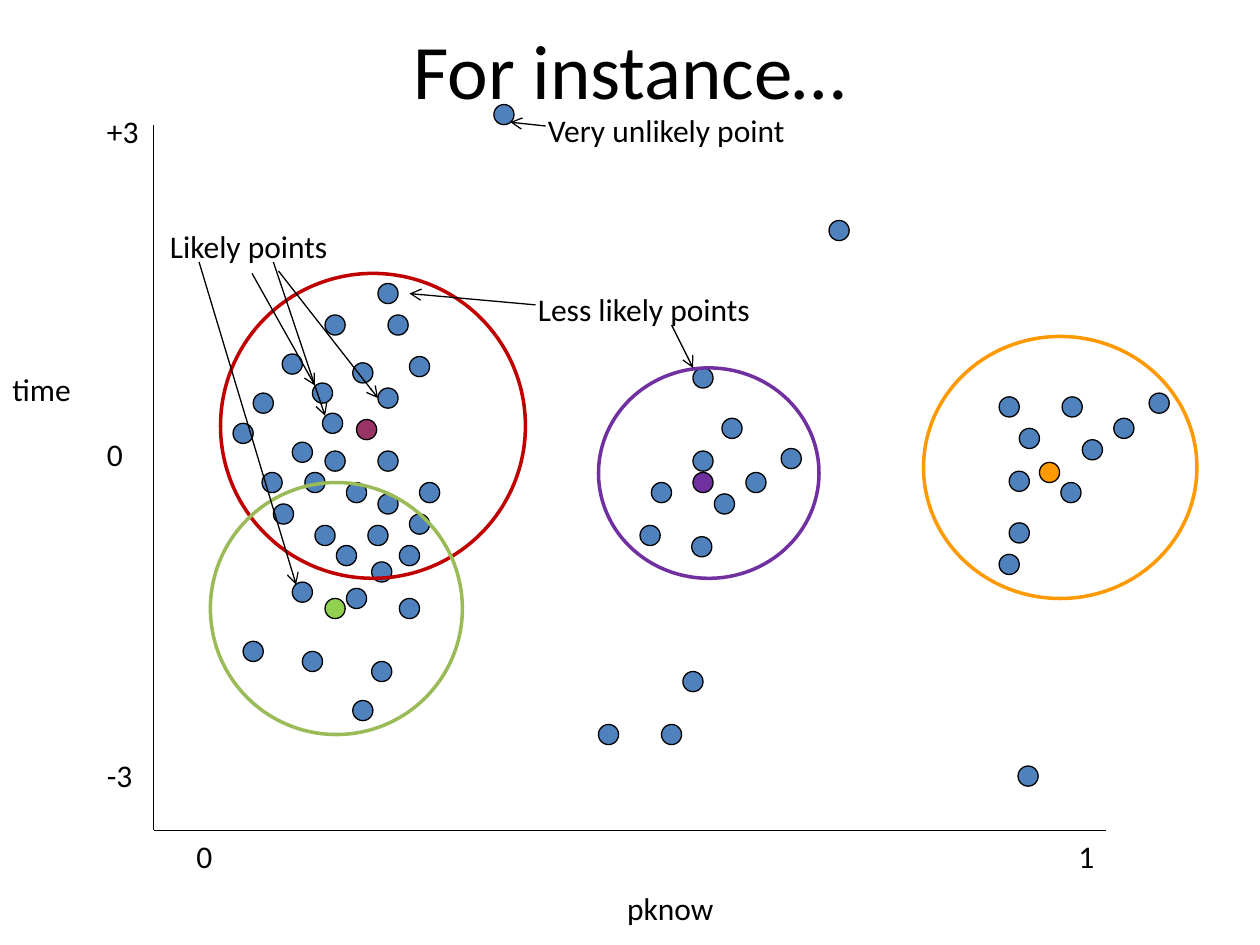
"""Build a slide of student clusters plotted by pknow and time, with likely and unlikely points."""
import pptx
import pptx.dml.color
import pptx.enum.shapes
import pptx.enum.text
import pptx.util
from lxml import etree
from pptx.oxml.ns import qn

PX = 9144  # EMU
DOT = 16
COLORS = {
    "ink": "000000", "point": "4F81BD",
    "plum": "993366", "lime": "92D050", "orange": "FF9900", "purple": "7030A0",
    "red": "C00000", "green": "9BBB59",
}

presentation = pptx.Presentation()
presentation.slide_width = 1000 * PX
presentation.slide_height = 750 * PX
slide = presentation.slides.add_slide(presentation.slide_layouts[6])
align = pptx.enum.text.PP_ALIGN
rgb = pptx.dml.color.RGBColor.from_string


def add_text(text, left, top, width, height=40, size=18, alignment=align.LEFT,
             anchor=pptx.enum.text.MSO_ANCHOR.TOP):
    label = slide.shapes.add_textbox(left * PX, top * PX, width * PX, height * PX)
    frame = label.text_frame
    frame.word_wrap = True
    frame.vertical_anchor = anchor
    paragraph = frame.paragraphs[0]
    paragraph.alignment = alignment
    run = paragraph.add_run()
    run.text = text
    run.font.name = "Calibri"
    run.font.size = pptx.util.Pt(size)
    run.font.color.rgb = rgb(COLORS["ink"])


def add_ellipse(left, top, width, height, line="ink", weight=0.75, fill=None):
    ellipse = slide.shapes.add_shape(
        pptx.enum.shapes.MSO_SHAPE.OVAL, left * PX, top * PX, width * PX, height * PX)
    ellipse.shadow.inherit = False
    if fill:
        ellipse.fill.solid()
        ellipse.fill.fore_color.rgb = rgb(COLORS[fill])
    else:
        ellipse.fill.background()
    ellipse.line.color.rgb = rgb(COLORS[line])
    ellipse.line.width = pptx.util.Pt(weight)


clustered_points = [
    # left clusters
    (317, 433), (267, 433), (275, 467), (325, 408), (317, 475), (292, 417),
    (217, 400), (242, 375), (208, 375), (308, 250), (258, 250), (325, 283),
    (275, 383), (300, 225), (300, 358), (333, 383), (258, 358), (280, 556),
    (295, 525), (193, 509), (232, 462), (295, 446), (240, 517), (248, 304),
    (224, 281), (185, 336), (201, 312), (232, 351), (280, 288), (300, 392),
    (256, 328), (300, 308), (250, 417),
    # middle cluster
    (517, 383), (508, 417), (567, 392), (592, 375), (550, 358), (549, 426),
    (620, 356), (550, 292), (573, 332),
    # right cluster
    (793, 440), (793, 315), (809, 340), (801, 374), (859, 349), (801, 415),
    (884, 332), (843, 315), (842, 383), (912, 312),
]
for left, top in clustered_points:
    add_ellipse(left, top, DOT, DOT, fill="point")

centers = [(283, 333, "plum"), (258, 475, "lime"), (825, 367, "orange"), (550, 375, "purple")]
for left, top, color in centers:
    add_ellipse(left, top, DOT, DOT, fill=color)

boundaries = [
    (175, 217, 242, 242, "red"),
    (167, 383, 200, 200, "green"),
    (475, 292, 175, 167, "purple"),
    (733, 267, 217, 208, "orange"),
]
for left, top, width, height, color in boundaries:
    add_ellipse(left, top, width, height, line=color, weight=2)

outliers = [(392, 83), (475, 575), (525, 575), (542, 533), (808, 608), (658, 175)]
for left, top in outliers:
    add_ellipse(left, top, DOT, DOT, fill="point")

add_text("For instance…", 50, -8, 900, height=125, size=44, alignment=align.CENTER,
         anchor=pptx.enum.text.MSO_ANCHOR.MIDDLE)

labels = [
    ("+3", 75, 84, 63), ("0", 75, 340, 63), ("-3", 75, 595, 63),
    ("0", 146, 659, 40), ("1", 846, 659, 40), ("time", 0, 289, 83),
    ("Likely points", 125, 175, 192),
    ("Less likely points", 417, 225, 192),
    ("Very unlikely point", 425, 83, 217),
]
for text, left, top, width in labels:
    add_text(text, left, top, width)
add_text("pknow", 146, 701, 772, alignment=align.CENTER)

axes = [(122, 99, 122, 659), (122, 659, 878, 659)]
pointers = [
    (200, 217, 250, 306), (217, 208, 258, 330), (221, 215, 300, 316),
    (425, 242, 325, 233), (533, 258, 550, 292), (433, 100, 405, 97),
    (158, 208, 235, 464),
]
for ends in axes + pointers:
    connector = slide.shapes.add_connector(
        pptx.enum.shapes.MSO_CONNECTOR.STRAIGHT, *(end * PX for end in ends))
    connector.line.color.rgb = rgb(COLORS["ink"])
    connector.line.width = pptx.util.Pt(0.75)
    properties = connector._element.spPr
    etree.SubElement(properties, qn("a:effectLst"))
    if ends in pointers:
        etree.SubElement(properties.find(qn("a:ln")), qn("a:tailEnd"), type="arrow")

presentation.save("out.pptx")
